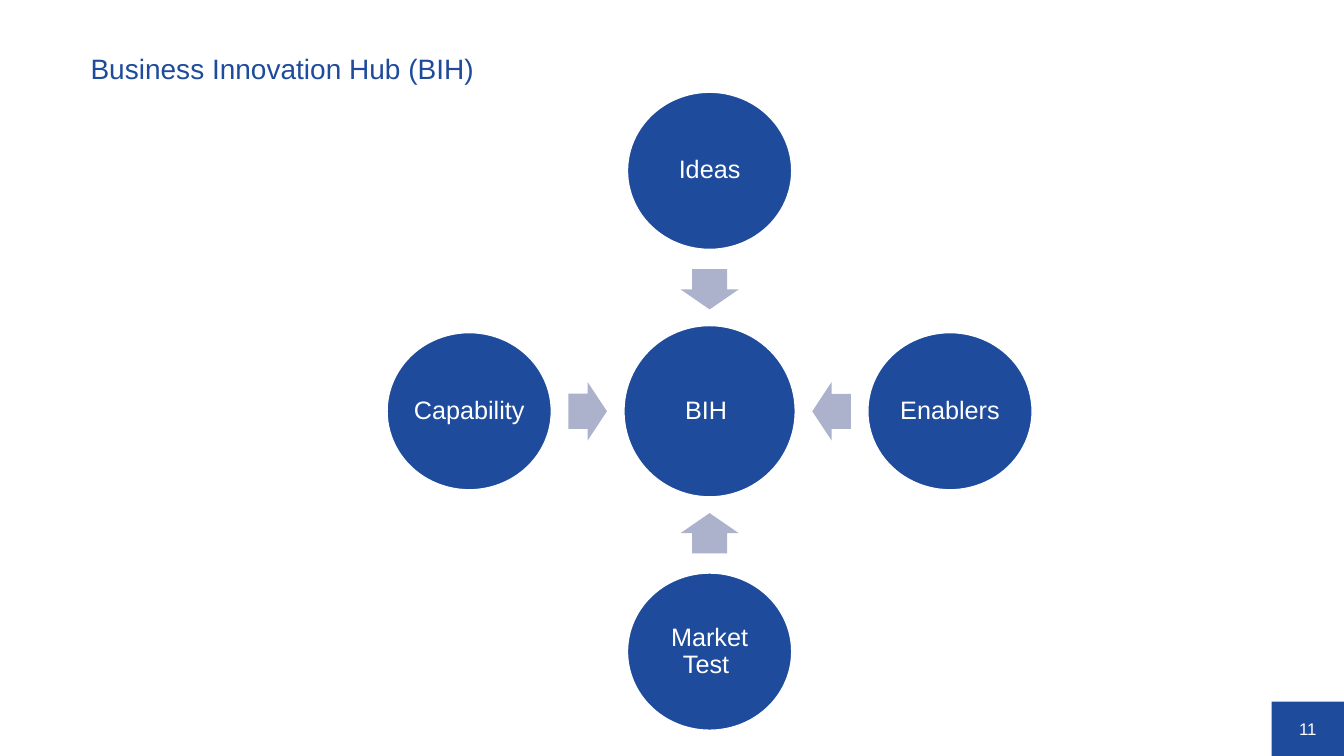
from pptx import Presentation
from pptx.dml.color import RGBColor
from pptx.enum.shapes import MSO_SHAPE as Shape
from pptx.enum.text import MSO_ANCHOR as Anchor, MSO_AUTO_SIZE as AutoSize, PP_ALIGN as Align
from pptx.util import Inches, Pt

CELL = 1 / 6
COLUMNS, ROWS = 80, 45
BLUE, GREY, WHITE = "1E4B9B", "ACB2CB", "FFFFFF"
HUB_X, HUB_Y = 42.24, 24.48
ORBIT, ARROW_ORBIT = 14.31, 7.26
SATELLITES = [
    ("Ideas", 0, -1, 90),
    ("Enablers", 1, 0, 180),
    ("Market Test ", 0, 1, 270),
    ("Capability", -1, 0, 0),
]


def color(hex_code):
    """Turn a hex string into a colour."""
    return RGBColor.from_string(hex_code)


def cells(*counts):
    """Turn counts of grid cells into lengths."""
    return [Inches(count * CELL) for count in counts]


def write(box, text, size, hex_code, align=Align.LEFT):
    """Write one paragraph into a box and return it."""
    para = box.text_frame.paragraphs[0]
    para.text = text
    para.alignment = align
    para.font.name = "Arial"
    para.font.size = Pt(size)
    para.font.color.rgb = color(hex_code)
    return para


def add_filled(page, kind, x, y, width, height, fill):
    """Add a plain filled shape centred on a grid point."""
    shape = page.shapes.add_shape(
        kind, *cells(x - width / 2, y - height / 2, width, height))
    shape.shadow.inherit = False
    shape.fill.solid()
    shape.fill.fore_color.rgb = color(fill)
    shape.line.fill.background()
    return shape


def write_centred(shape, text, size):
    """Write white text in the middle of a shape without margins."""
    frame = shape.text_frame
    frame.word_wrap = True
    frame.vertical_anchor = Anchor.MIDDLE
    frame.margin_left = frame.margin_right = 0
    frame.margin_top = frame.margin_bottom = 0
    return write(shape, text, size, WHITE, Align.CENTER)


def add_circle(page, text, x, y, width, height):
    """Add a labelled blue circle with a white outline."""
    circle = add_filled(page, Shape.OVAL, x, y, width, height, BLUE)
    circle.line.color.rgb = color(WHITE)
    circle.line.width = Pt(1)
    write_centred(circle, text, 18).line_spacing = 0.9


def add_arrow(page, x, y, length, rotation):
    """Add a grey block arrow turned towards the hub."""
    arrow = add_filled(page, Shape.RIGHT_ARROW, x, y, length, 3.48, GREY)
    arrow.adjustments[0] = 0.6
    arrow.adjustments[1] = 0.5
    arrow.rotation = rotation


def add_title(page, text):
    """Add the slide title."""
    box = page.shapes.add_textbox(*cells(4.8, 2.76, 24.66, 2.64))
    box.text_frame.word_wrap = False
    box.text_frame.auto_size = AutoSize.SHAPE_TO_FIT_TEXT
    write(box, text, 20, BLUE)


def add_page_number(page, text):
    """Add the page number block in the bottom right corner."""
    width, height = 4.3, 3.24
    block = add_filled(page, Shape.RECTANGLE, COLUMNS - width / 2,
                       ROWS - height / 2, width, height, BLUE)
    write_centred(block, text, 12)


def main():
    """Build the hub diagram and save the deck."""
    deck = Presentation()
    deck.slide_width, deck.slide_height = cells(COLUMNS, ROWS)
    page = deck.slides.add_slide(deck.slide_layouts[6])
    add_page_number(page, "11")
    add_circle(page, "BIH ", HUB_X, HUB_Y, 10.2, 10.2)
    for text, across, down, rotation in SATELLITES:
        add_arrow(page, HUB_X + across * ARROW_ORBIT,
                  HUB_Y + down * ARROW_ORBIT, 2.4 if down else 2.3, rotation)
        add_circle(page, text, HUB_X + across * ORBIT,
                   HUB_Y + down * ORBIT, 9.78, 9.36)
    add_title(page, "Business Innovation Hub (BIH)")
    deck.save("out.pptx")


if __name__ == "__main__":
    main()
